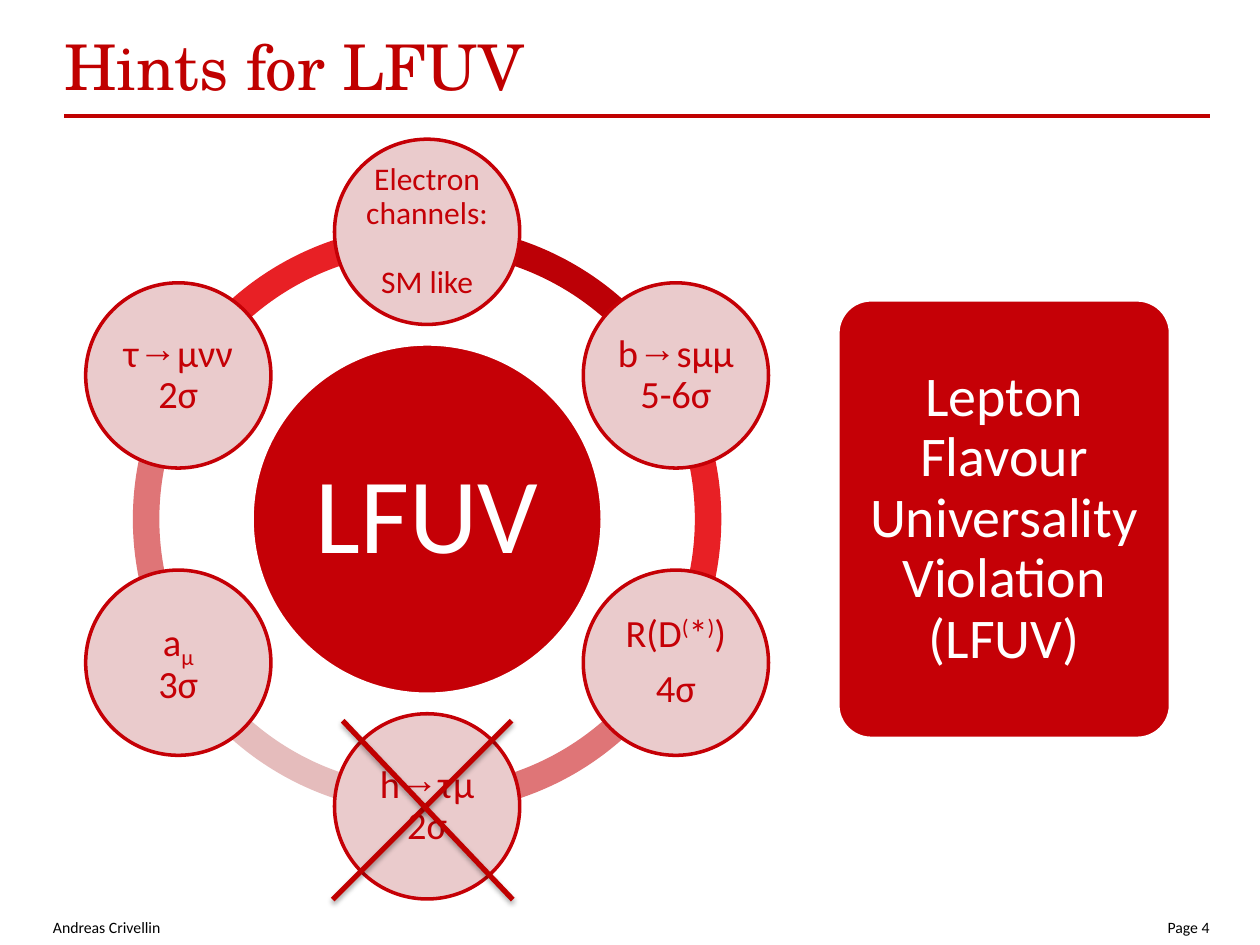
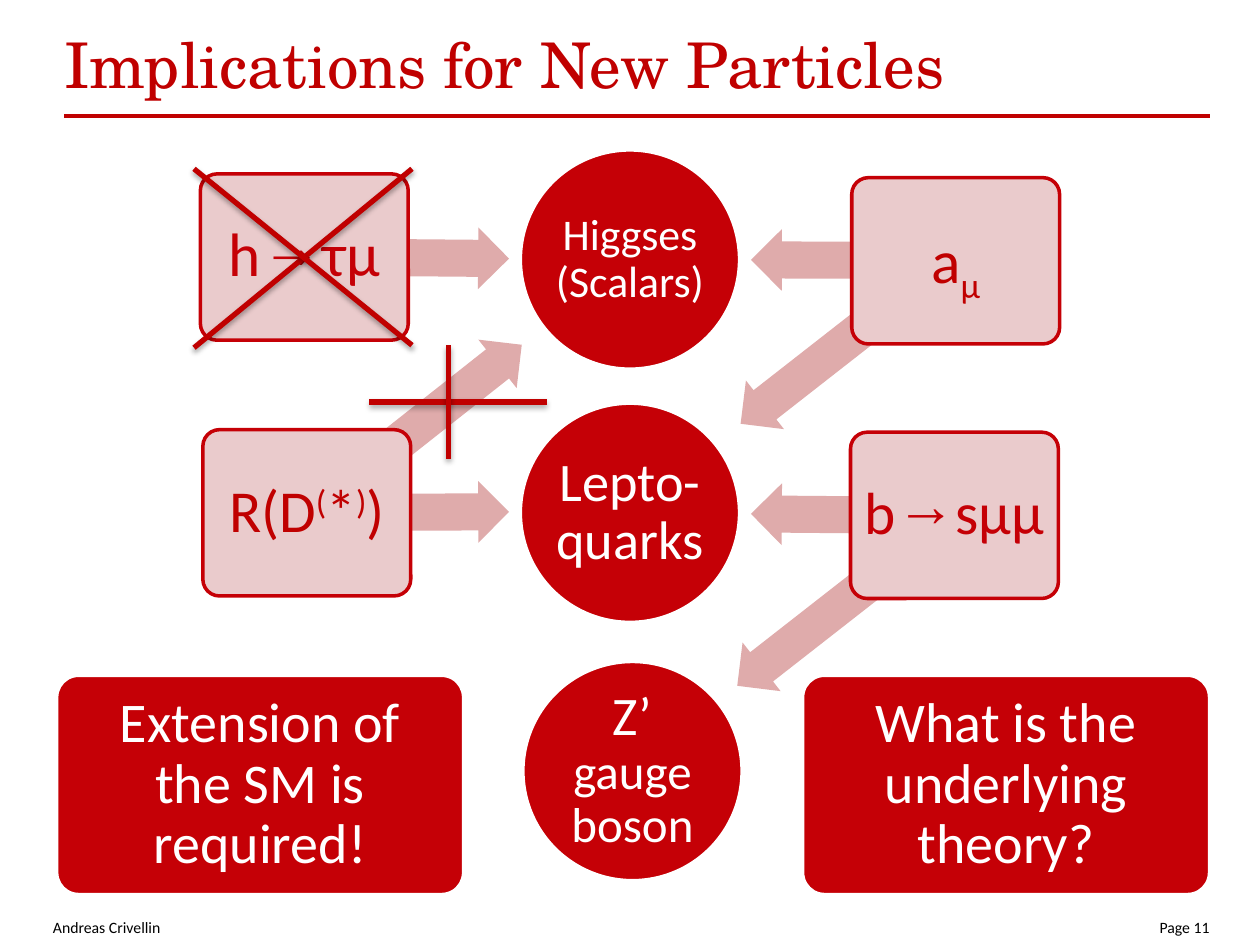
from math import cos, radians, sin

from lxml.etree import SubElement
from pptx import Presentation
from pptx.dml.color import RGBColor
from pptx.enum.shapes import MSO_CONNECTOR, MSO_SHAPE
from pptx.enum.text import MSO_ANCHOR, PP_ALIGN
from pptx.oxml.ns import qn
from pptx.util import Inches, Pt

RED = "C50006"
DARK_RED = "C00000"
PINK = "EACBCC"
ARROW_PINK = "DFABAB"
WHITE = "FFFFFF"
BLACK = "000000"
TITLE_FONT = "TeX Gyre Schola"
BODY_FONT = "Calibri"
ARROW_FONT = "Arial Narrow"
BASELINES = {"^": "30000", "_": "-25000"}


def write_text(shape, lines, size, color, font=BODY_FONT, align=PP_ALIGN.CENTER,
               inset=0, gap=0, spacing=0.9):
    """Fill a shape; "|" separates runs, "^" raises a run and "_" lowers it."""
    frame = shape.text_frame
    frame.word_wrap = True
    frame.margin_left = frame.margin_right = Inches(inset)
    frame.margin_top = frame.margin_bottom = 0
    for index, line in enumerate(lines):
        paragraph = frame.add_paragraph() if index else frame.paragraphs[0]
        paragraph.alignment = align
        paragraph.line_spacing = spacing
        if index and gap:
            paragraph.space_before = Pt(gap)
        for piece in line.split("|"):
            run = paragraph.add_run()
            run.text = piece.lstrip("^_")
            run.font.name = ARROW_FONT if piece == "→" else font
            run.font.size = Pt(size)
            run.font.color.rgb = RGBColor.from_string(color)
            if piece[0] in BASELINES:
                run.font._element.set("baseline", BASELINES[piece[0]])


def draw_shape(slide, kind, box, fill, line=None, adjustments=(), rotation=0):
    shape = slide.shapes.add_shape(kind, *map(Inches, box))
    shape.shadow.inherit = False
    shape.rotation = rotation
    shape.fill.solid()
    shape.fill.fore_color.rgb = RGBColor.from_string(fill)
    if line:
        shape.line.color.rgb = RGBColor.from_string(line)
        shape.line.width = Pt(2)
    else:
        shape.line.fill.background()
    for index, value in enumerate(adjustments):
        shape.adjustments[index] = value
    shape.text_frame.vertical_anchor = MSO_ANCHOR.MIDDLE
    return shape


presentation = Presentation()
presentation.slide_width = Inches(10)
presentation.slide_height = Inches(7.5)

# Shared title and footer
slides = []
for title, title_top, page in [
    ("Hints for LFUV", 0.22, "Page 4"),
    ("Implications for New Particles", 0.2, "Page 11"),
]:
    slide = presentation.slides.add_slide(presentation.slide_layouts[6])
    slides.append(slide)
    for box, text, size, color, font, align in [
        ((0.51, title_top, 8.46, 0.56), title, 36, DARK_RED, TITLE_FONT, PP_ALIGN.LEFT),
        ((0.42, 7.28, 1.75, 0.22), "Andreas Crivellin", 9, BLACK, BODY_FONT, PP_ALIGN.LEFT),
        ((8.97, 7.28, 0.63, 0.22), page, 9, BLACK, BODY_FONT, PP_ALIGN.RIGHT),
    ]:
        textbox = slide.shapes.add_textbox(*map(Inches, box))
        write_text(textbox, [text], size, color, font, align, spacing=1.0)
hints, implications = slides

# Slide 1: ring of arcs, clockwise from the top
center_x, center_y = 3.39, 4.12
ring_size, hub_size, node_size, orbit = 4.67, 2.78, 1.47, 2.28
arc_colors = ["BC0006", "E82025", "DF7577", "E5BCBC", "DF7577", "E82025"]
for index, color in enumerate(arc_colors):
    start = (270 + 60 * index) % 360
    end = (start + 60) % 360
    # Arc angles are stored in 60000ths of a degree, adjustments in 100000ths
    draw_shape(hints, MSO_SHAPE.BLOCK_ARC,
               (center_x - ring_size / 2, center_y - ring_size / 2, ring_size, ring_size),
               color, adjustments=(start * 0.6, end * 0.6, 0.045))

# Slide 1: hub and the six measurements
hub = draw_shape(hints, MSO_SHAPE.OVAL,
                 (center_x - hub_size / 2, center_y - hub_size / 2, hub_size, hub_size),
                 RED, WHITE)
write_text(hub, ["LFUV"], 61, WHITE, inset=0.08)
measurements = [
    (["Electron channels:", "SM like"], 18, 19.5),
    (["b|→|sµµ", "5-6σ"], 22, 0),
    (["R(D|^(|*|^)|)", "4σ"], 22, 8),
    (["h|→|τµ", "2σ"], 22, 0),
    (["a|_µ", "3σ"], 22, 0),
    (["τ|→|µνν", "2σ"], 22, 0),
]
for index, (lines, size, gap) in enumerate(measurements):
    angle = radians(60 * index - 90)
    left = center_x + orbit * cos(angle) - node_size / 2
    top = center_y + orbit * sin(angle) - node_size / 2
    node = draw_shape(hints, MSO_SHAPE.OVAL, (left, top, node_size, node_size), PINK, RED)
    write_text(node, lines, size, RED, inset=0.02, gap=gap)

# Slide 2: arrows from observables to particles
for left, top, width, rotation in [
    (2.82, 2.95, 1.48, 141.7),
    (5.69, 4.73, 1.52, 322),
    (5.72, 2.66, 1.49, 322),
    (5.96, 3.84, 1.61, 0.5),
    (2.44, 3.82, 1.6, 179.8),
    (2.42, 1.8, 1.62, 180.5),
    (5.96, 1.82, 1.62, 0.2),
]:
    draw_shape(implications, MSO_SHAPE.LEFT_ARROW, (left, top, width, 0.49),
               ARROW_PINK, adjustments=(0.6, 0.5), rotation=rotation)

# Slide 2: new particles
for left, top, text, size in [
    (4.13, 1.19, "Higgses (Scalars)", 25),
    (4.13, 3.2, "Lepto-quarks", 31),
    (4.15, 5.25, "Z’ |gauge boson", 28),
]:
    particle = draw_shape(implications, MSO_SHAPE.OVAL, (left, top, 1.74, 1.74), RED, WHITE)
    write_text(particle, [text], size, WHITE, inset=0.02)
particle.text_frame.paragraphs[0].runs[0].font.size = Pt(31)

# Slide 2: observables
for left, top, text, size, color in [
    (1.59, 1.38, "h|→|τμ", 35, RED),
    (6.76, 1.41, "a|_μ", 35, DARK_RED),
    (1.61, 3.41, "R(D|^(|*|^)|)", 34, DARK_RED),
    (6.75, 3.43, "b|→|sμμ", 34, RED),
]:
    observable = draw_shape(implications, MSO_SHAPE.ROUNDED_RECTANGLE,
                            (left, top, 1.65, 1.32), PINK, RED, (0.1,))
    write_text(observable, [text], size, color, inset=0.07)

# Statement boxes
for slide, box, text in [
    (hints, (6.65, 2.38, 2.64, 3.48), "Lepton Flavour Universality Violation (LFUV)"),
    (implications, (0.45, 5.36, 3.23, 1.74), "Extension of the SM is required!"),
    (implications, (6.37, 5.36, 3.23, 1.74), "What is the underlying theory?"),
]:
    statement = draw_shape(slide, MSO_SHAPE.ROUNDED_RECTANGLE, box, RED, WHITE, (0.1,))
    write_text(statement, [text], 32, WHITE, inset=0.17)

# Title rules, and shadowed strokes that cross out excluded items
title_rule = (0.51, 0.92, 9.6, 0.92)
strokes = [
    (hints, (4.06, 5.72, 2.64, 7.14)),
    (hints, (2.72, 5.72, 4.07, 7.14)),
    (implications, (3.27, 1.34, 1.54, 2.76)),
    (implications, (3.27, 2.74, 1.54, 1.34)),
    (implications, (4.34, 3.19, 2.93, 3.19)),
    (implications, (3.56, 3.64, 3.56, 2.74)),
]
for slide, ends in [(slide, title_rule) for slide in slides] + strokes:
    is_rule = ends == title_rule
    connector = slide.shapes.add_connector(MSO_CONNECTOR.STRAIGHT, *map(Inches, ends))
    connector.line.color.rgb = RGBColor.from_string(DARK_RED)
    connector.line.width = Pt(2.5 if is_rule else 3)
    effects = SubElement(connector._element.spPr, qn("a:effectLst"))
    if not is_rule:
        shadow = SubElement(effects, qn("a:outerShdw"), blurRad=str(Pt(3.1)),
                            dist=str(Pt(1.8)), dir="5400000", rotWithShape="0")
        shadow_color = SubElement(shadow, qn("a:srgbClr"), val=BLACK)
        SubElement(shadow_color, qn("a:alpha"), val="35000")

presentation.save("out.pptx")
